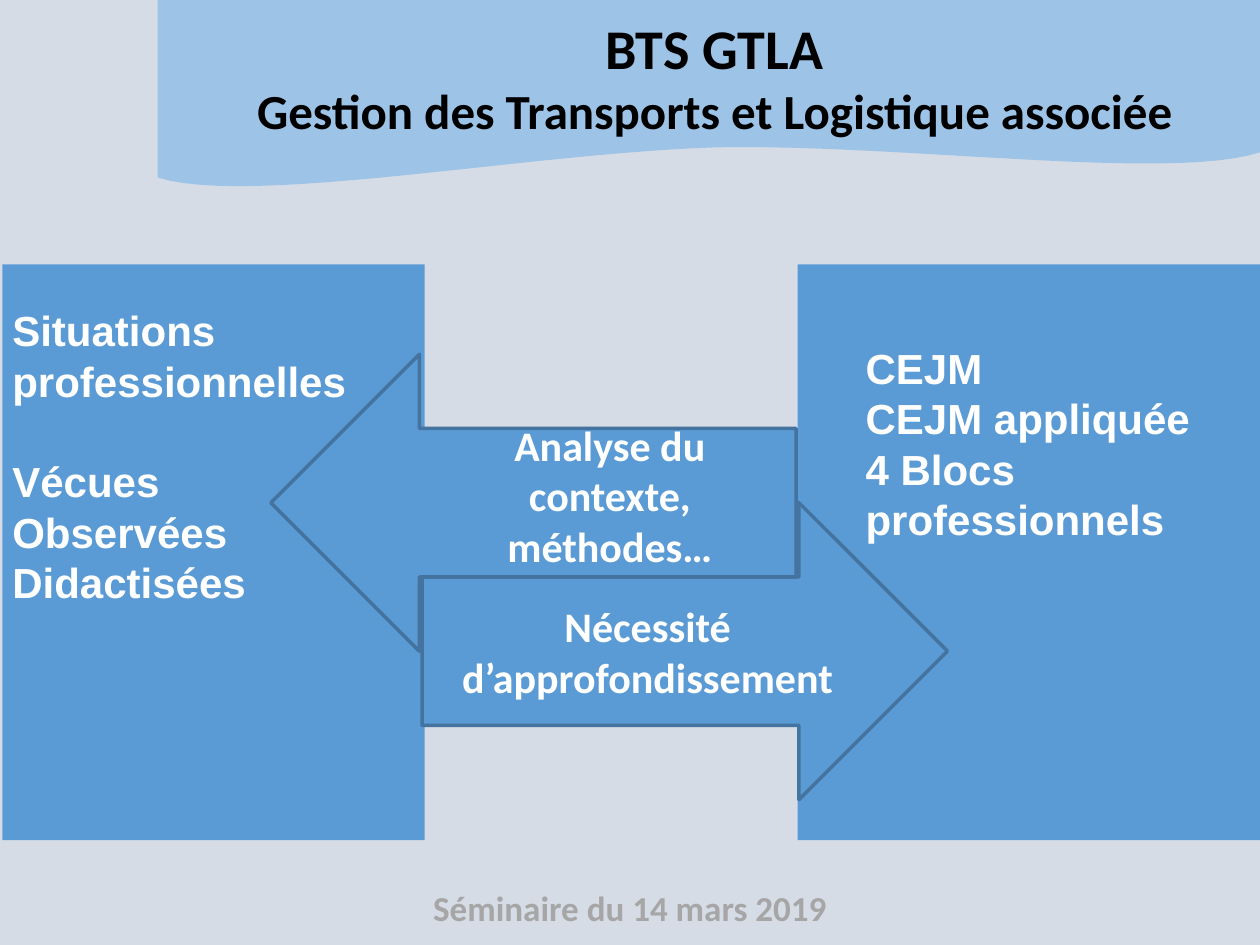
import dataclasses

import pptx
import pptx.dml.color
import pptx.enum.shapes
import pptx.enum.text
import pptx.util

Cm, Pt = pptx.util.Cm, pptx.util.Pt
SHAPE = pptx.enum.shapes.MSO_SHAPE
ALIGN = pptx.enum.text.PP_ALIGN
ANCHOR = pptx.enum.text.MSO_ANCHOR


@dataclasses.dataclass(frozen=True)
class Theme:
    background: str = "D6DCE5"
    band: str = "9DC3E6"
    block: str = "5B9BD5"
    outline: str = "43739E"
    dark: str = "000000"
    light: str = "FFFFFF"
    muted: str = "A6A6A6"
    heading_font: str = "Calibri"
    list_font: str = "Arial"
    title_size: float = 32
    subtitle_size: float = 28
    body_size: float = 24
    footer_size: float = 20
    list_leading: float = 28.8


THEME = Theme()


def rgb(value):
    return pptx.dml.color.RGBColor.from_string(value)


def place(sp, box):
    sp.left, sp.top, sp.width, sp.height = (Cm(v) for v in box)


def paint(sp, fill, line=None):
    sp.shadow.inherit = False
    sp.fill.solid()
    sp.fill.fore_color.rgb = rgb(fill)
    if line:
        sp.line.color.rgb = rgb(line)
        sp.line.width = Pt(2)
    else:
        sp.line.fill.background()


def write_text(sp, lines, size=THEME.body_size, font=THEME.heading_font,
               color=THEME.light, align=ALIGN.CENTER, anchor=ANCHOR.TOP,
               leading=None):
    """Write one bold paragraph for each line; a line is text or (text, format)."""
    tf = sp.text_frame
    tf.word_wrap = True
    tf.auto_size = pptx.enum.text.MSO_AUTO_SIZE.NONE
    tf.vertical_anchor = anchor
    for i, line in enumerate(lines):
        text, extra = (line, {}) if isinstance(line, str) else line
        p = tf.paragraphs[0] if i == 0 else tf.add_paragraph()
        p.alignment = align
        if leading:
            p.line_spacing = Pt(leading)
        if "before" in extra:
            p.space_before = Pt(extra["before"])
        r = p.add_run()
        r.text = text
        r.font.name = font
        r.font.size = Pt(extra.get("size", size))
        r.font.bold = True
        r.font.color.rgb = rgb(color)


def add_text(slide, box, lines, **fmt):
    sp = slide.shapes.add_textbox(*(Cm(v) for v in box))
    write_text(sp, lines, **fmt)


def bezier(p0, p1, p2, p3, steps=24):
    """Points along a cubic curve, without its start."""
    for i in range(1, steps + 1):
        t = i / steps
        u = 1 - t
        yield tuple(u**3 * a + 3 * u * u * t * b + 3 * u * t * t * c + t**3 * d
                    for a, b, c, d in zip(p0, p1, p2, p3))


def add_header(slide, box):
    left, top, width, _ = box
    # Band with a wavy lower edge
    right, middle, end = (width, 3.07), (11.3, 2.97), (0, 3.58)
    points = [(width, 0), right,
              *bezier(right, (20.42, 3.66), (15.01, 2.9), middle),
              *bezier(middle, (7.59, 3.07), (1.88, 4.17), end)]
    builder = slide.shapes.build_freeform(Cm(left), Cm(top))
    builder.add_line_segments([(Cm(left + x), Cm(top + y)) for x, y in points])
    paint(builder.convert_to_shape(), THEME.band)
    # Title, brought in front of the band
    title = slide.shapes.title
    place(title, (left + 1.6, top + 0.15, 19.25, 2.82))
    write_text(title, ["BTS GTLA",
                       ("Gestion des Transports et Logistique associée",
                        {"size": THEME.subtitle_size})],
               size=THEME.title_size, color=THEME.dark)
    slide.shapes._spTree.append(title._element)


def add_panel(slide, box):
    sp = slide.shapes.add_shape(SHAPE.RECTANGLE, *(Cm(v) for v in box))
    paint(sp, THEME.block)


def add_panel_list(slide, box, offset, size, lines):
    add_text(slide, (box[0] + offset[0], box[1] + offset[1], *size), lines,
             font=THEME.list_font, align=ALIGN.LEFT, leading=THEME.list_leading)


def add_arrow(slide, box, rotation=0):
    sp = slide.shapes.add_shape(SHAPE.RIGHT_ARROW, *(Cm(v) for v in box))
    paint(sp, THEME.block, THEME.outline)
    sp.rotation = rotation
    return sp


def add_exchange(slide, box):
    """Two opposite arrows, each overlapping half of the other."""
    left, top, width, height = box
    arrow_w, arrow_h = 10.59, height * 2 / 3
    forward = add_arrow(slide, (left + width - arrow_w, top + height / 3,
                                arrow_w, arrow_h))
    write_text(forward, ["Nécessité d’approfondissement"], anchor=ANCHOR.MIDDLE)
    add_arrow(slide, (left, top, arrow_w, arrow_h), rotation=180)
    # Label of the arrow pointing left
    add_text(slide, (left + 3.05, top + 1.19, 7.57, 3.33),
             ["Analyse du contexte, méthodes…"])


def main():
    prs = pptx.Presentation()
    prs.slide_width, prs.slide_height = Cm(25.4), Cm(19.05)
    slide = prs.slides.add_slide(prs.slide_layouts[5])
    slide.background.fill.solid()
    slide.background.fill.fore_color.rgb = rgb(THEME.background)

    add_text(slide, (6.35, 17.75, 12.7, 1.12), ["Séminaire du 14 mars 2019"],
             size=THEME.footer_size, color=THEME.muted)
    add_header(slide, (3.18, 0, 22.22, 4.17))

    # Panels, then the arrows across them, then the lists on top
    situations = (0.05, 5.33, 8.51, 11.61)
    courses = (16.08, 5.33, 9.32, 11.61)
    for box in (situations, courses):
        add_panel(slide, box)
    add_exchange(slide, (5.46, 7.14, 13.64, 8.98))
    add_panel_list(slide, courses, (1.12, 1.45), (8.2, 4.37),
                   ["CEJM", "CEJM appliquée", "4 Blocs professionnels"])
    add_panel_list(slide, situations, (-0.05, 0.69), (7.29, 7.44),
                   ["Situations professionnelles",
                    ("Vécues", {"before": THEME.list_leading}),
                    "Observées", "Didactisées"])
    prs.save("out.pptx")


if __name__ == "__main__":
    main()
